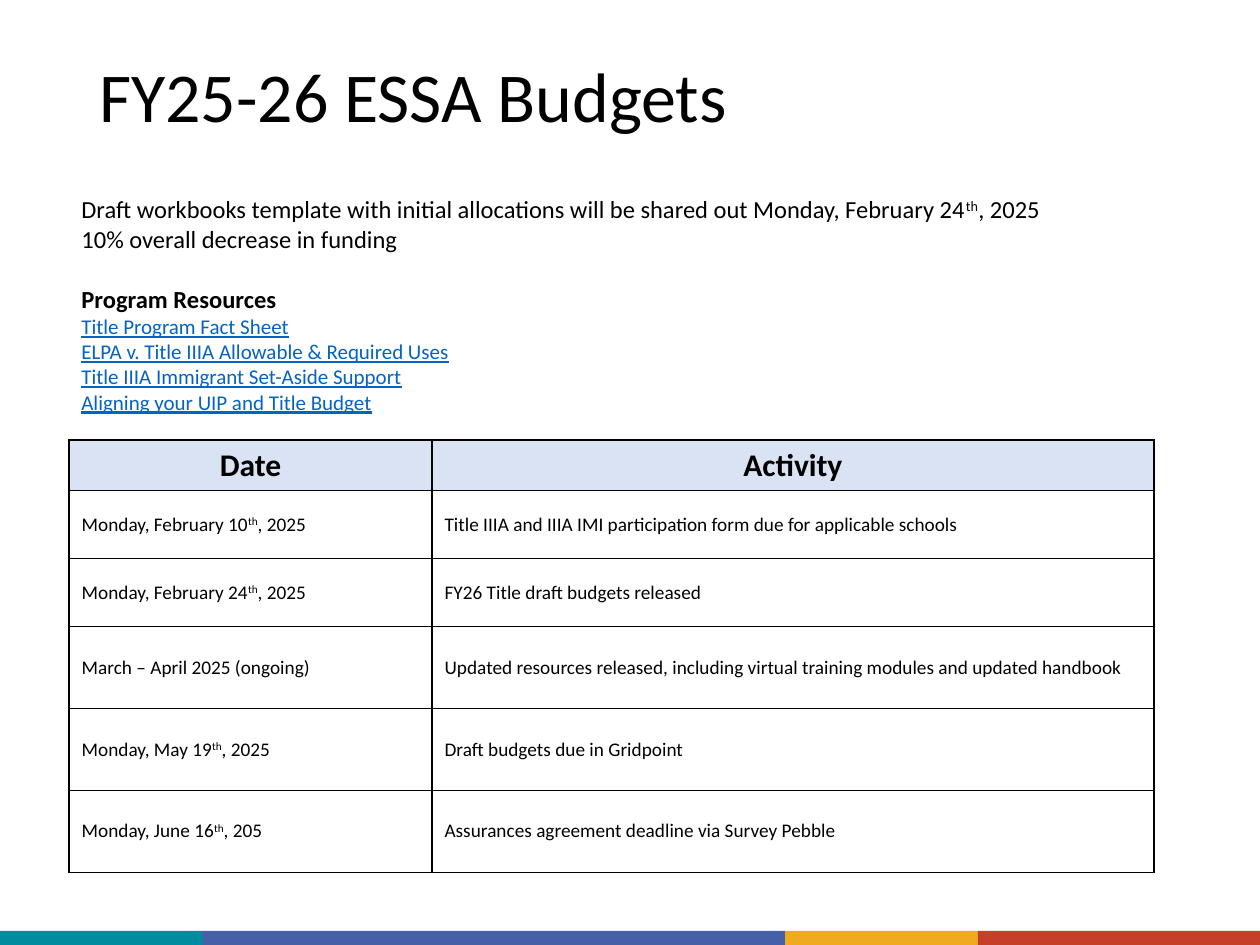
from lxml.etree import SubElement
from pptx import Presentation
from pptx.dml.color import RGBColor
from pptx.enum.shapes import MSO_SHAPE
from pptx.enum.text import MSO_ANCHOR, PP_ALIGN
from pptx.oxml.ns import qn
from pptx.util import Emu, Pt

BLACK = RGBColor(0, 0, 0)
LINK = RGBColor(0x05, 0x63, 0xC1)
PALE = RGBColor(0xDA, 0xE3, 0xF3)
TEAL = RGBColor(0x00, 0x8C, 0xA0)
BLUE = RGBColor(0x45, 0x5F, 0xA9)
GOLD = RGBColor(0xEF, 0xAA, 0x1F)
RED = RGBColor(0xC6, 0x3F, 0x28)

BANDS = [(203, TEAL), (582, BLUE), (193, GOLD), (282, RED)]
NOTES = [
    "Draft workbooks template with initial allocations will be shared out "
    "Monday, February 24^th^, 2025",
    "10% overall decrease in funding",
]
LINKS = [
    "Title Program Fact Sheet",
    "ELPA v. Title IIIA Allowable & Required Uses",
    "Title IIIA Immigrant Set-Aside Support",
    "Aligning your UIP and Title Budget",
]
COLS = [363, 722]
ROWS = [
    (50, "Date", "Activity"),
    (68, "Monday, February 10^th^, 2025",
     "Title IIIA and IIIA IMI participation form due for applicable schools"),
    (68, "Monday, February 24^th^, 2025", "FY26 Title draft budgets released"),
    (82, "March – April 2025 (ongoing)",
     "Updated resources released, including virtual training modules and updated handbook"),
    (82, "Monday, May 19^th^, 2025", "Draft budgets due in Gridpoint"),
    (82, "Monday, June 16^th^, 205", "Assurances agreement deadline via Survey Pebble"),
]


def px(n):
    return Emu(round(n * 914400 / 126))


def write(para, text, size, color=BLACK, bold=False, line=False):
    """Fill a paragraph; text between carets is raised."""
    for i, part in enumerate(text.split("^")):
        run = para.add_run()
        run.text = part
        if i % 2:
            run._r.get_or_add_rPr().set("baseline", "30000")
    font = para.font
    font.name, font.size, font.bold = "Calibri", Pt(size), bold
    font.color.rgb = color
    for run in para.runs if line else []:
        run.font.underline = True


def add_box(slide, x, y, w, h):
    frame = slide.shapes.add_textbox(px(x), px(y), px(w), px(h)).text_frame
    frame.word_wrap = True
    return frame


def add_bands(slide, x, y, h):
    for w, color in BANDS:
        band = slide.shapes.add_shape(MSO_SHAPE.RECTANGLE, px(x), px(y), px(w), px(h))
        band.shadow.inherit = False
        band.fill.solid()
        band.fill.fore_color.rgb = color
        band.line.fill.background()
        x += w


def add_title(slide, x, y, w, h):
    frame = add_box(slide, x, y, w, h)
    frame.vertical_anchor = MSO_ANCHOR.MIDDLE
    para = frame.paragraphs[0]
    para.line_spacing = 0.9
    write(para, "FY25-26 ESSA Budgets", 40)


def add_notes(slide, x, y, w, h):
    frame = add_box(slide, x, y, w, h)
    write(frame.paragraphs[0], NOTES[0], 14)
    write(frame.add_paragraph(), NOTES[1], 14)


def add_links(slide, x, y, w, h):
    frame = add_box(slide, x, y, w, h)
    write(frame.paragraphs[0], "Program Resources", 14, bold=True)
    for text in LINKS:
        write(frame.add_paragraph(), text, 12, LINK, line=True)


def set_edges(cell):
    props = cell._tc.get_or_add_tcPr()
    for side in ("lnL", "lnR", "lnT", "lnB"):
        edge = SubElement(props, qn("a:" + side), w=str(Pt(1)))
        fill = SubElement(edge, qn("a:solidFill"))
        SubElement(fill, qn("a:srgbClr"), val=str(BLACK))


def add_dates(slide, x, y):
    w, h = sum(COLS), sum(row[0] for row in ROWS)
    table = slide.shapes.add_table(
        len(ROWS), len(COLS), px(x), px(y), px(w), px(h)).table
    table.first_row = table.horz_banding = False
    for col, width in zip(table.columns, COLS):
        col.width = px(width)
    for r, (height, *texts) in enumerate(ROWS):
        table.rows[r].height = px(height)
        head = r == 0
        for c, text in enumerate(texts):
            cell = table.cell(r, c)
            set_edges(cell)
            cell.vertical_anchor = MSO_ANCHOR.MIDDLE
            if head:
                cell.fill.solid()
                cell.fill.fore_color.rgb = PALE
            else:
                cell.fill.background()
            para = cell.text_frame.paragraphs[0]
            para.alignment = PP_ALIGN.CENTER if head else PP_ALIGN.LEFT
            write(para, text, 18 if head else 11, bold=head)


def main():
    deck = Presentation()
    deck.slide_width, deck.slide_height = px(1260), px(945)
    slide = deck.slides.add_slide(deck.slide_layouts[6])
    add_bands(slide, 0, 931, 14)
    add_title(slide, 87, 50, 1086, 100)
    add_notes(slide, 69, 188, 1104, 72)
    add_links(slide, 69, 278, 582, 144)
    add_dates(slide, 69, 440)
    deck.save("out.pptx")


if __name__ == "__main__":
    main()
